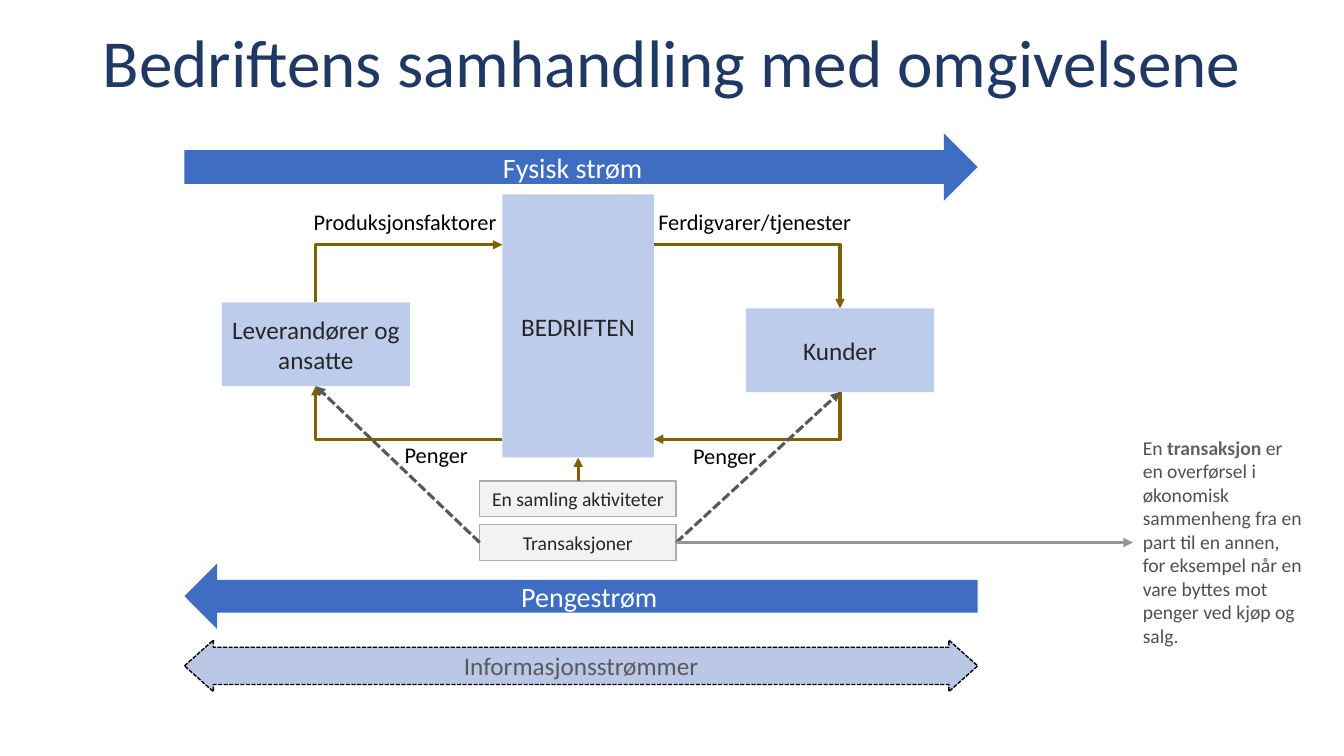
from lxml import etree
from pptx import Presentation
from pptx import util as u
from pptx.dml.color import RGBColor
from pptx.enum import dml, shapes, text
from pptx.oxml import ns

KIND = shapes.MSO_SHAPE
LINE = shapes.MSO_CONNECTOR
CENTER = text.PP_ALIGN.CENTER
DASH = dml.MSO_LINE.SQUARE_DOT


def paint(target, hex_color):
    target.rgb = RGBColor.from_string(hex_color)


def apply(target, values):
    for name, value in values.items():
        setattr(target, name, value)


class FlowSlide:
    font = "Calibri"
    blue, pale, grey = "3E6DC2", "BCCCEA", "F2F2F2"
    ink, gold = "262626", "806000"

    def __init__(self, deck):
        self.slide = deck.slides.add_slide(deck.slide_layouts[5])

    def wording(self, frame, runs, size, align=CENTER, **paragraph_format):
        frame.word_wrap = True
        paragraph = frame.paragraphs[0]
        apply(paragraph, {"alignment": align, **paragraph_format})
        for words, color, bold in runs:
            run = paragraph.add_run()
            run.text = words
            apply(run.font, {"name": self.font, "size": u.Pt(size), "bold": bold})
            paint(run.font.color, color)

    def title(self, words, left, top, width, height):
        heading = self.slide.shapes.title
        apply(heading, {"left": u.Cm(left), "top": u.Cm(top),
                        "width": u.Cm(width), "height": u.Cm(height)})
        apply(heading.text_frame, {"auto_size": text.MSO_AUTO_SIZE.NONE,
                                   "vertical_anchor": text.MSO_ANCHOR.MIDDLE})
        self.wording(heading.text_frame, [(words, "203864", False)], 48, line_spacing=0.9)

    def block(self, kind, words, box, fill, color, size, edge=None, dash=None, adjust=(), inset=0.25):
        block = self.slide.shapes.add_shape(kind, *map(u.Cm, box))
        block.shadow.inherit = False
        block.fill.solid()
        paint(block.fill.fore_color, fill)
        if edge:
            paint(block.line.color, edge)
            apply(block.line, {"width": u.Pt(1), "dash_style": dash})
        else:
            block.line.fill.background()
        for index, value in enumerate(adjust):
            block.adjustments[index] = value
        apply(block.text_frame, {"vertical_anchor": text.MSO_ANCHOR.MIDDLE,
                                 "margin_left": u.Cm(inset), "margin_right": u.Cm(inset)})
        self.wording(block.text_frame, [(words, color, False)], size)

    def label(self, runs, box, size, align=CENTER):
        label = self.slide.shapes.add_textbox(*map(u.Cm, box))
        self.wording(label.text_frame, runs, size, align)

    def arrow(self, start, end, color, dash=None, kind=LINE.STRAIGHT):
        arrow = self.slide.shapes.add_connector(kind, *map(u.Cm, start + end))
        paint(arrow.line.color, color)
        apply(arrow.line, {"width": u.Pt(2.25), "dash_style": dash})
        properties = arrow._element.spPr
        outline = properties.find(ns.qn("a:ln"))
        etree.SubElement(outline, ns.qn("a:tailEnd"), type="triangle")
        etree.SubElement(properties, ns.qn("a:effectLst"))
        return properties

    def corner(self, start, end, upright_first):
        (x1, y1), (x2, y2) = start, end
        if upright_first:
            mid_x, mid_y = (x1 + x2) / 2, (y1 + y2) / 2
            half_x, half_y = (y2 - y1) / 2, (x1 - x2) / 2
            start = (mid_x - half_x, mid_y - half_y)
            end = (mid_x + half_x, mid_y + half_y)
        properties = self.arrow(start, end, self.gold, kind=LINE.ELBOW)
        properties.find(ns.qn("a:prstGeom")).set("prst", "bentConnector2")
        if upright_first:
            properties.find(ns.qn("a:xfrm")).set("rot", str(90 * 60000))


def main():
    deck = Presentation()
    apply(deck, {"slide_width": u.Cm(33.87), "slide_height": u.Cm(19.05)})
    flow = FlowSlide(deck)
    flow.title("Bedriftens samhandling med omgivelsene", 0, 0.61, 33.87, 2.11)

    stream_left, stream_width = 4.65, 19.99
    for kind, words, top, height in (
        (KIND.RIGHT_ARROW, "Fysisk strøm", 3.36, 1.7),
        (KIND.LEFT_ARROW, "Pengestrøm", 14.2, 1.65),
    ):
        flow.block(kind, words, (stream_left, top, stream_width, height),
                   flow.blue, "FFFFFF", 20, inset=0.1)

    company = (12.66, 4.9, 3.82, 6.63)
    suppliers = (5.59, 7.62, 4.74, 2.11)
    customers = (18.8, 7.77, 4.74, 2.11)
    for words, box in (("BEDRIFTEN", company), ("Leverandører og ansatte", suppliers),
                       ("Kunder", customers)):
        flow.block(KIND.RECTANGLE, words, box, flow.pale, flow.ink, 18)

    company_left, company_right = company[0], company[0] + company[2]
    company_middle = company[0] + company[2] / 2
    company_foot = company[1] + company[3]
    goods_level, money_level = 6.17, 11.07
    supplier_x, customer_x = (box[0] + box[2] / 2 for box in (suppliers, customers))
    supplier_foot, customer_foot = (box[1] + box[3] for box in (suppliers, customers))
    flow.corner((company_left, money_level), (supplier_x, supplier_foot), False)
    flow.corner((supplier_x, suppliers[1]), (company_left, goods_level), True)
    flow.corner((company_right, goods_level), (customer_x, customers[1]), False)
    flow.corner((customer_x, customer_foot), (company_right, money_level), True)

    for words, left, top, width in (
        ("Penger", 9.27, 11, 3.45),
        ("Penger", 16.54, 11.02, 3.45),
        ("Produksjonsfaktorer", 7.01, 5.11, 6.4),
        ("Ferdigvarer/tjenester", 15.82, 5.11, 6.4),
    ):
        flow.label([(words, "000000", False)], (left, top, width, 0.94), 16)

    detail_left, detail_width, detail_height = 12.09, 4.95, 0.9
    activities_top, transactions_top = 12.12, 13.22
    for words, top in (("En samling aktiviteter", activities_top),
                       ("Transaksjoner", transactions_top)):
        flow.block(KIND.RECTANGLE, words, (detail_left, top, detail_width, detail_height),
                   flow.grey, flow.ink, 14, edge="AFABAB")
    flow.arrow((company_middle, activities_top), (company_middle, company_foot), flow.gold)

    definition_left = 28.55
    flow.label([
        ("En ", "4D5156", False),
        ("transaksjon", "5F6368", True),
        (" er en overførsel i økonomisk sammenheng fra en part til en annen, "
         "for eksempel når en vare byttes mot penger ved kjøp og salg.", "4D5156", False),
    ], (definition_left, 10.85, 4.52, 5.64), 14, text.PP_ALIGN.LEFT)

    transactions_y = transactions_top + detail_height / 2
    detail_right = detail_left + detail_width
    flow.arrow((detail_left, transactions_y), (supplier_x, supplier_foot), "595959", DASH)
    flow.arrow((detail_right, transactions_y), (customer_x, customer_foot), "595959", DASH)
    flow.block(KIND.LEFT_RIGHT_ARROW, "Informasjonsstrømmer",
               (stream_left, 16.13, stream_width, 1.3), "BAC7E7", "595959", 18,
               edge="000000", dash=DASH, adjust=(0.72, 0.56))
    flow.arrow((detail_right, transactions_y), (definition_left, transactions_y), "989494")
    deck.save("out.pptx")


if __name__ == "__main__":
    main()
